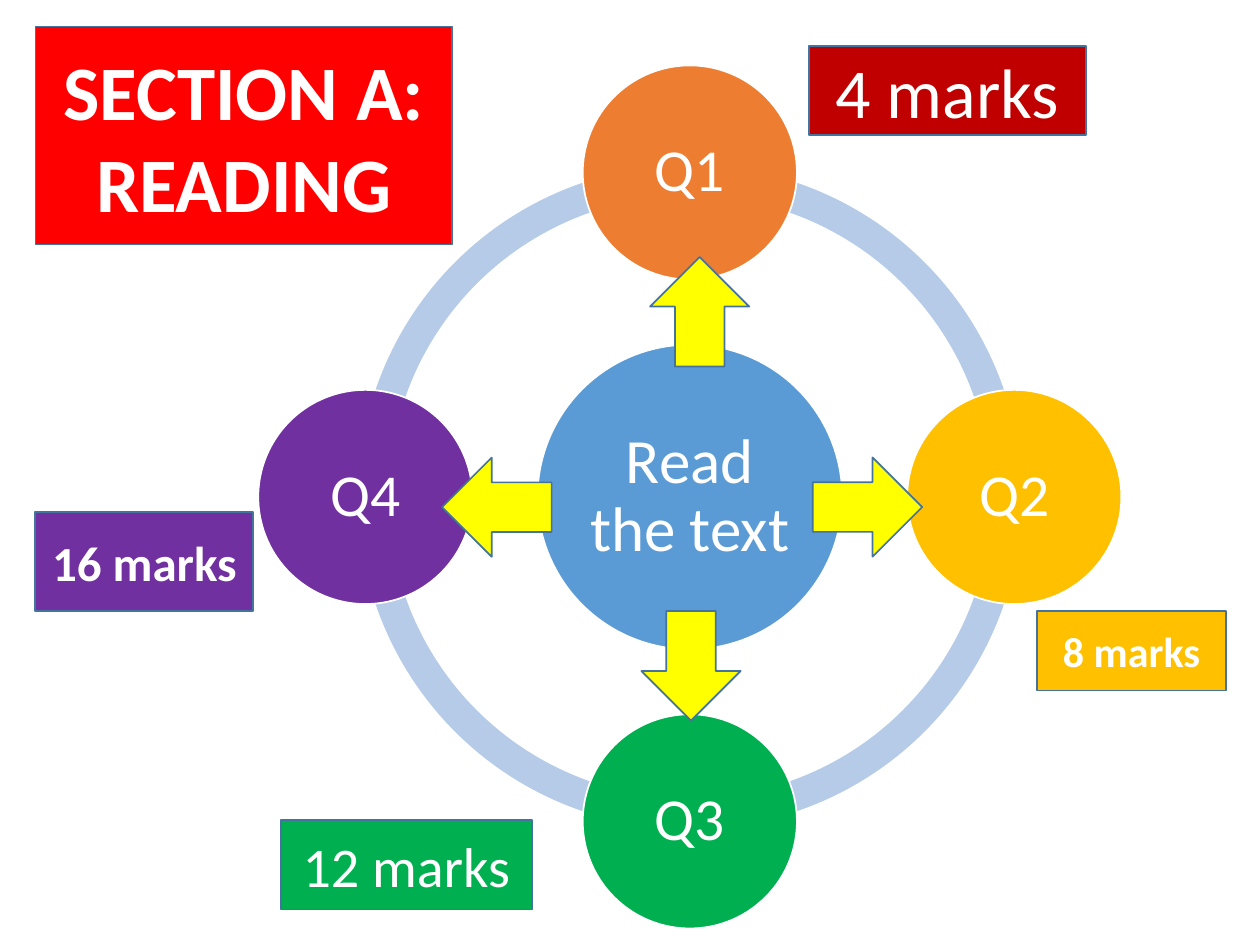
from pptx import Presentation
from pptx.dml.color import RGBColor
from pptx.enum.shapes import MSO_SHAPE
from pptx.enum.text import MSO_ANCHOR, PP_ALIGN
from pptx.util import Pt

ARC = MSO_SHAPE.BLOCK_ARC
OVAL = MSO_SHAPE.OVAL
RECTANGLE = MSO_SHAPE.RECTANGLE
UP_ARROW = MSO_SHAPE.UP_ARROW
MIDDLE = MSO_ANCHOR.MIDDLE
CENTER = PP_ALIGN.CENTER

WHITE = RGBColor(0xFF, 0xFF, 0xFF)
PALE_BLUE = RGBColor(0xB5, 0xCB, 0xE7)
BLUE = RGBColor(0x5B, 0x9B, 0xD5)
OUTLINE_BLUE = RGBColor(0x43, 0x73, 0x9E)
ORANGE = RGBColor(0xED, 0x7D, 0x31)
GOLD = RGBColor(0xFF, 0xC0, 0x00)
GREEN = RGBColor(0x00, 0xB0, 0x50)
PURPLE = RGBColor(0x70, 0x30, 0xA0)
RED = RGBColor(0xFF, 0x00, 0x00)
DARK_RED = RGBColor(0xC0, 0x00, 0x00)
YELLOW = RGBColor(0xFF, 0xFF, 0x00)

FONT = "Calibri"
CENTER_X, CENTER_Y = 394.2, 284
ORBIT = 185.4
RING_SIZE = 379.4
HUB_SIZE = 174.2
QUESTION_SIZE = 122.4
ARROW_WIDTH, ARROW_HEIGHT = 56.7, 62.6

# The adjustments of a block arc count 0.6 per degree.
ARC_UNITS_PER_DEGREE = 0.6
RING_THICKNESS = 0.046

# Text, colour and direction from the hub
QUESTIONS = [
    ("Q1", ORANGE, (0, -1)),
    ("Q2", GOLD, (1, 0)),
    ("Q3", GREEN, (0, 1)),
    ("Q4", PURPLE, (-1, 0)),
]

# Text, colour, box (left, top, width, height), font size, bold
LABELS = [
    ("SECTION A: READING", RED, (20.2, 15.1, 238.3, 124.6), 44, True),
    ("4 marks", DARK_RED, (462.2, 26.2, 158.4, 51), 40, False),
    ("8 marks", GOLD, (592.6, 349.2, 108, 45.4), 24, True),
    ("12 marks", GREEN, (160.6, 468.7, 143.3, 51), 32, False),
    ("16 marks", PURPLE, (20.2, 292.6, 124.6, 56.7), 28, True),
]

# Left, top and rotation, clockwise from the top
ARROWS = [(371.5, 146.9, 0), (467.3, 258.5, 90), (366.5, 349.2, 180), (255.6, 258.5, 270)]


def add_filled_shape(slide, kind, box, fill, outline=None):
    shape = slide.shapes.add_shape(kind, *(Pt(length) for length in box))
    shape.shadow.inherit = False
    shape.fill.solid()
    shape.fill.fore_color.rgb = fill
    if outline is None:
        shape.line.fill.background()
    else:
        shape.line.color.rgb = outline
        shape.line.width = Pt(1)
    return shape


def write_text(shape, text, size, bold=False, line_spacing=None, inset=None):
    frame = shape.text_frame
    frame.word_wrap = True
    frame.vertical_anchor = MIDDLE
    if inset is not None:
        frame.margin_left = frame.margin_right = Pt(inset)
        frame.margin_top = frame.margin_bottom = Pt(inset)
    paragraph = frame.paragraphs[0]
    paragraph.alignment = CENTER
    paragraph.line_spacing = line_spacing
    run = paragraph.add_run()
    run.text = text
    run.font.name = FONT
    run.font.size = Pt(size)
    run.font.bold = bold
    run.font.color.rgb = WHITE


def centered_box(x, y, size):
    return x - size / 2, y - size / 2, size, size


def add_ring(slide):
    """Draw the ring as four quarter arcs."""
    for start in (180, 90, 0, 270):
        box = centered_box(CENTER_X, CENTER_Y, RING_SIZE)
        arc = add_filled_shape(slide, ARC, box, PALE_BLUE)
        arc.adjustments[0] = start * ARC_UNITS_PER_DEGREE
        arc.adjustments[1] = (start + 90) % 360 * ARC_UNITS_PER_DEGREE
        arc.adjustments[2] = RING_THICKNESS


def add_circle(slide, text, fill, x, y, diameter, size):
    circle = add_filled_shape(slide, OVAL, centered_box(x, y, diameter), fill, WHITE)
    write_text(circle, text, size, line_spacing=0.9, inset=3.6)


def add_label(slide, text, fill, box, size, bold):
    label = add_filled_shape(slide, RECTANGLE, box, fill, OUTLINE_BLUE)
    write_text(label, text, size, bold=bold)


def add_arrow(slide, left, top, rotation):
    box = (left, top, ARROW_WIDTH, ARROW_HEIGHT)
    arrow = add_filled_shape(slide, UP_ARROW, box, YELLOW, OUTLINE_BLUE)
    arrow.rotation = rotation


def main():
    presentation = Presentation()
    presentation.slide_width = Pt(720)
    presentation.slide_height = Pt(540)
    slide = presentation.slides.add_slide(presentation.slide_layouts[6])

    add_ring(slide)
    add_circle(slide, "Read the text", BLUE, CENTER_X, CENTER_Y, HUB_SIZE, 36)
    for text, fill, (across, down) in QUESTIONS:
        x = CENTER_X + across * ORBIT
        y = CENTER_Y + down * ORBIT
        add_circle(slide, text, fill, x, y, QUESTION_SIZE, 34)
    for label in LABELS:
        add_label(slide, *label)
    for arrow in ARROWS:
        add_arrow(slide, *arrow)

    presentation.save("out.pptx")


if __name__ == "__main__":
    main()
